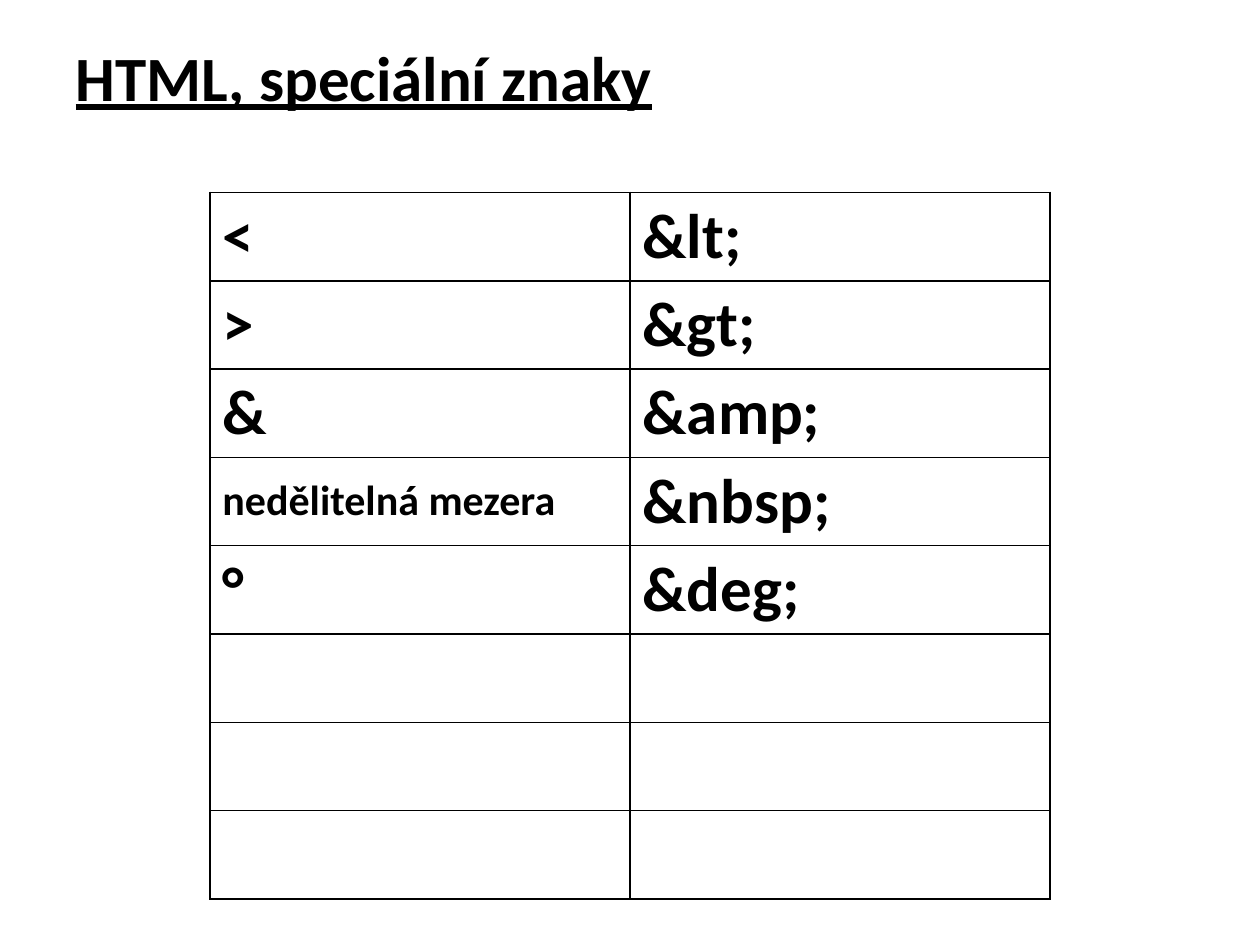
from dataclasses import dataclass

from lxml import etree
from pptx import Presentation
from pptx import util as u
from pptx.dml.color import RGBColor
from pptx.enum import text
from pptx.oxml import ns


@dataclass(frozen=True)
class Theme:
    font: str = "Calibri"
    ink: str = "000000"
    paper: str = "FFFFFF"
    large: int = 36
    small: int = 24
    border: float = 1


def write(tf, content, *, font, size, color, bold=True, underline=False):
    p = tf.paragraphs[0]
    p.alignment = text.PP_ALIGN.LEFT
    r = p.add_run()
    r.text = content
    r.font.name = font
    r.font.size = u.Pt(size)
    r.font.bold = bold
    r.font.underline = underline
    r.font.color.rgb = RGBColor.from_string(color)


class SlideBuilder:
    def __init__(self, prs, theme):
        self.theme = theme
        self.s = prs.slides.add_slide(prs.slide_layouts[5])
        fill = self.s.background.fill
        fill.solid()
        fill.fore_color.rgb = RGBColor.from_string(theme.paper)

    def text(self, tf, content, size, **style):
        write(tf, content, font=self.theme.font, size=size,
              color=self.theme.ink, **style)

    def title(self, content, left, top, width, height):
        sp = self.s.shapes.title
        sp.left, sp.top = u.Cm(left), u.Cm(top)
        sp.width, sp.height = u.Cm(width), u.Cm(height)
        tf = sp.text_frame
        tf.word_wrap = True
        tf.auto_size = text.MSO_AUTO_SIZE.SHAPE_TO_FIT_TEXT
        tf.vertical_anchor = text.MSO_ANCHOR.TOP
        self.text(tf, content, self.theme.large, underline=True)

    def borders(self, cell):
        tc_pr = cell._tc.get_or_add_tcPr()
        for i, side in enumerate(("lnL", "lnR", "lnT", "lnB")):
            ln = etree.Element(ns.qn(f"a:{side}"), w=str(u.Pt(self.theme.border)))
            fill = etree.SubElement(ln, ns.qn("a:solidFill"))
            etree.SubElement(fill, ns.qn("a:srgbClr"), val=self.theme.ink)
            tc_pr.insert(i, ln)

    def table(self, rows, left, top, col_width, row_height):
        n_rows, n_cols = len(rows), len(rows[0])
        table = self.s.shapes.add_table(
            n_rows, n_cols, u.Cm(left), u.Cm(top),
            u.Cm(col_width * n_cols), u.Cm(row_height * n_rows)).table
        table.first_row = False
        table.horz_banding = False
        for row, values in zip(table.rows, rows):
            row.height = u.Cm(row_height)
            for cell, value in zip(row.cells, values):
                cell.fill.background()
                cell.vertical_anchor = text.MSO_ANCHOR.MIDDLE
                cell.margin_top = cell.margin_bottom = u.Cm(0.1)
                self.borders(cell)
                if value:
                    is_phrase = " " in value
                    size = self.theme.small if is_phrase else self.theme.large
                    self.text(cell.text_frame, value, size)


def main():
    prs = Presentation()
    prs.slide_width, prs.slide_height = u.Cm(25.4), u.Cm(19.05)
    entities = [
        ("<", "&lt;"),
        (">", "&gt;"),
        ("&", "&amp;"),
        ("nedělitelná mezera", "&nbsp;"),
        ("°", "&deg;"),
    ]
    spare_rows = [("", "")] * 3

    slide = SlideBuilder(prs, Theme())
    slide.title("HTML, speciální znaky", 1.27, 0.64, 18.42, 1.8)
    slide.table(entities + spare_rows, 4.23, 3.88, 8.47, 1.78)
    prs.save("out.pptx")


if __name__ == "__main__":
    main()
